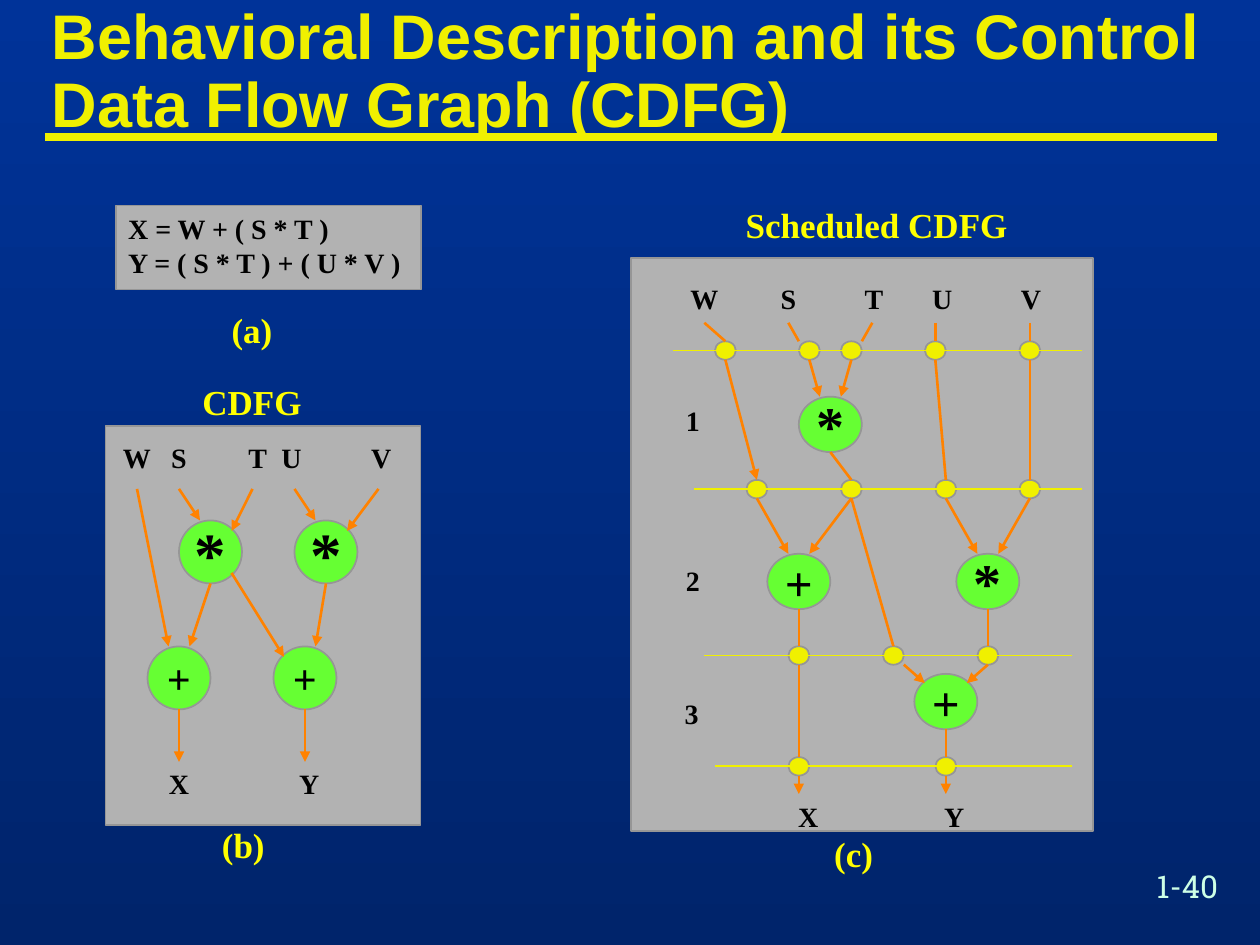
"""Build a slide showing a behavioral description and its control data flow graphs."""
from dataclasses import dataclass
from typing import NamedTuple

from lxml import etree
from pptx import Presentation
from pptx.dml.color import RGBColor
from pptx.enum.shapes import MSO_CONNECTOR, MSO_SHAPE
from pptx.enum.text import MSO_ANCHOR, MSO_AUTO_SIZE, PP_ALIGN
from pptx.oxml.ns import qn
from pptx.util import Pt

RECTANGLE, OVAL = MSO_SHAPE.RECTANGLE, MSO_SHAPE.OVAL
STRAIGHT = MSO_CONNECTOR.STRAIGHT
LEFT, CENTER = PP_ALIGN.LEFT, PP_ALIGN.CENTER
TOP, MIDDLE = MSO_ANCHOR.TOP, MSO_ANCHOR.MIDDLE
NO_AUTOFIT = MSO_AUTO_SIZE.NONE


@dataclass(frozen=True)
class Theme:
    sky: str = "003399"
    navy: str = "00246B"
    gold: str = "F0F000"
    yellow: str = "FFFF00"
    black: str = "000000"
    gray: str = "B2B2B2"
    border: str = "969696"
    green: str = "66FF33"
    orange: str = "FF8200"
    mint: str = "CDFFE6"
    serif: str = "Times New Roman"
    sans: str = "Arial"
    slab: str = "Roboto Slab"
    title: int = 36
    caption: int = 20
    number: int = 18
    label: int = 16


class Operator(NamedTuple):
    sign: str
    x: float
    y: float
    size: int


class Label(NamedTuple):
    text: str
    x: float
    y: float


class Edge(NamedTuple):
    start: tuple
    end: tuple
    arrow: bool = True


class Step(NamedTuple):
    y: int
    left: int
    right: int
    registers: tuple


@dataclass(frozen=True)
class Graph:
    """A panel whose contents are placed in grid units from its top left corner."""
    left: float
    top: float
    columns: int
    rows: int
    step_x: float
    step_y: float
    operators: list
    edges: list
    labels: list
    steps: tuple = ()

    def place(self, x: float, y: float) -> tuple:
        return self.left + x * self.step_x, self.top + y * self.step_y


THEME = Theme()

CDFG = Graph(
    60.3, 243.4, 30, 38, 6, 6,
    operators=[Operator("*", 10, 12, 36), Operator("*", 21, 12, 36),
               Operator("+", 7, 24, 24), Operator("+", 19, 24, 24)],
    edges=[Edge((10, 15), (8, 21)), Edge((12, 14), (17, 22)), Edge((21, 15), (20, 21)),
           Edge((7, 6), (9, 9)), Edge((18, 6), (20, 9)), Edge((14, 6), (12, 10)),
           Edge((26, 6), (23, 10)), Edge((3, 6), (6, 21)),
           Edge((7, 27), (7, 32)), Edge((19, 27), (19, 32))],
    labels=[Label("W", 3, 3), Label("S", 7, 3), Label("T", 14.5, 3), Label("U", 17.7, 3),
            Label("V", 26.25, 3), Label("X", 7, 34), Label("Y", 19.4, 34)],
)

SCHEDULED = Graph(
    360.5, 147.5, 44, 62, 6, 5.28,
    operators=[Operator("*", 19, 18, 32), Operator("*", 34, 35, 32),
               Operator("+", 16, 35, 28), Operator("+", 30, 48, 28)],
    edges=[Edge((7, 7), (9, 9), False), Edge((15, 7), (16, 9), False),
           Edge((23, 7), (22, 9), False), Edge((29, 7), (29, 9), False),
           Edge((38, 7), (38, 9), False), Edge((17, 11), (18, 15)), Edge((21, 11), (20, 15)),
           Edge((9, 11), (12, 24)), Edge((19, 21), (21, 24), False),
           Edge((29, 11), (30, 24), False), Edge((38, 11), (38, 24), False),
           Edge((12, 26), (15, 32)), Edge((21, 26), (17, 32)),
           Edge((30, 26), (33, 32)), Edge((38, 26), (35, 32)),
           Edge((16, 38), (16, 42), False), Edge((21, 26), (25, 42), False),
           Edge((34, 38), (34, 42), False), Edge((26, 44), (28, 46)), Edge((34, 44), (32, 46)),
           Edge((16, 44), (16, 54), False), Edge((30, 51), (30, 54), False),
           Edge((16, 56), (16, 58)), Edge((30, 56), (30, 58))],
    labels=[Label("W", 7, 4.3), Label("S", 15, 4.3), Label("T", 23.15, 4.3),
            Label("U", 29.65, 4.3), Label("V", 38.1, 4.3), Label("X", 16.9, 60.4),
            Label("Y", 30.8, 60.4), Label("1", 5.9, 17.5), Label("2", 5.9, 34.9),
            Label("3", 5.8, 49.3)],
    steps=(Step(10, 4, 43, (9, 17, 21, 29, 38)), Step(25, 6, 43, (12, 21, 30, 38)),
           Step(43, 7, 42, (16, 25, 34)), Step(55, 8, 42, (16, 30))),
)


def write_text(shape, *lines: str, size: float = THEME.label, color: str = THEME.black,
               font: str = THEME.serif, bold: bool = True, align=CENTER, anchor=MIDDLE,
               wrap: bool = False, gap: float = 0, spacing: float = 1) -> None:
    frame = shape.text_frame
    frame.word_wrap, frame.auto_size, frame.vertical_anchor = wrap, NO_AUTOFIT, anchor
    for index, line in enumerate(lines):
        para = frame.add_paragraph() if index else frame.paragraphs[0]
        para.alignment, para.line_spacing = align, spacing
        para.space_before = Pt(gap if index else 0)
        span = para.add_run()
        span.text = line
        span.font.size, span.font.name, span.font.bold = Pt(size), font, bold
        span.font.color.rgb = RGBColor.from_string(color)


def add_text(slide, x: float, y: float, *lines: str, width: float = 30,
             height: float = 26, **style) -> None:
    box = slide.shapes.add_textbox(Pt(x - width / 2), Pt(y - height / 2), Pt(width), Pt(height))
    write_text(box, *lines, **style)


def add_block(slide, kind, left: float, top: float, width: float, height: float, fill: str):
    block = slide.shapes.add_shape(kind, Pt(left), Pt(top), Pt(width), Pt(height))
    block.shadow.inherit = False
    block.fill.solid()
    block.fill.fore_color.rgb = RGBColor.from_string(fill)
    block.line.color.rgb = RGBColor.from_string(THEME.border)
    block.line.width = Pt(1)
    return block


def add_line(slide, start: tuple, end: tuple, color: str, width: float, arrow: bool = False):
    line = slide.shapes.add_connector(STRAIGHT, *(Pt(value) for value in (*start, *end)))
    line.line.color.rgb = RGBColor.from_string(color)
    line.line.width = Pt(width)
    properties = line.element.spPr
    if arrow:
        etree.SubElement(properties.find(qn("a:ln")), qn("a:tailEnd"), type="triangle")
    etree.SubElement(properties, qn("a:effectLst"))
    return line


def add_oval(slide, graph: Graph, x: float, y: float, units: int, fill: str):
    width, height = units * graph.step_x, units * graph.step_y
    center_x, center_y = graph.place(x, y)
    return add_block(slide, OVAL, center_x - width / 2, center_y - height / 2,
                     width, height, fill)


def draw_graph(slide, graph: Graph) -> None:
    add_block(slide, RECTANGLE, graph.left, graph.top, graph.columns * graph.step_x,
              graph.rows * graph.step_y, THEME.gray)
    for step in graph.steps:
        for x in step.registers:
            add_oval(slide, graph, x, step.y, 2, THEME.gold)
        add_line(slide, graph.place(step.left, step.y), graph.place(step.right, step.y),
                 THEME.gold, 1)
    for operator in graph.operators:
        oval = add_oval(slide, graph, operator.x, operator.y, 6, THEME.green)
        write_text(oval, operator.sign, size=operator.size)
    for edge in graph.edges:
        add_line(slide, graph.place(*edge.start), graph.place(*edge.end),
                 THEME.orange, 1.5, edge.arrow)
    for label in graph.labels:
        add_text(slide, *graph.place(label.x, label.y), label.text)


def draw_title(slide, text: str) -> None:
    title = slide.shapes.title
    title.left, title.top, title.width, title.height = Pt(22.3), Pt(16.5), Pt(676), Pt(50.4)
    write_text(title, text, size=THEME.title, color=THEME.gold, font=THEME.sans,
               align=LEFT, wrap=True, spacing=0.9)
    effects = etree.Element(qn("a:effectLst"))
    shadow = etree.SubElement(effects, qn("a:outerShdw"), dist="35921", dir="2700000")
    etree.SubElement(shadow, qn("a:srgbClr"), val=THEME.black)
    title.element.find(".//" + qn("a:rPr")).find(qn("a:solidFill")).addnext(effects)
    rule = add_line(slide, (26, 78.3), (695.7, 78.3), THEME.gold, 4.5)
    title.element.addprevious(rule.element)


def main() -> None:
    deck = Presentation()
    deck.slide_width, deck.slide_height = Pt(720), Pt(540)
    slide = deck.slides.add_slide(deck.slide_layouts[5])
    background = slide.background.fill
    background.gradient()
    background.gradient_angle = 270
    for stop, color in zip(background.gradient_stops, (THEME.sky, THEME.navy)):
        stop.color.rgb = RGBColor.from_string(color)

    draw_title(slide, "Behavioral Description and its Control Data Flow Graph (CDFG)")
    code = add_block(slide, RECTANGLE, 66.2, 117.5, 174.5, 48, THEME.gray)
    write_text(code, "X = W + ( S * T )", "Y = ( S * T ) + ( U * V )", align=LEFT, anchor=TOP)
    draw_graph(slide, CDFG)
    draw_graph(slide, SCHEDULED)

    caption = {"size": THEME.caption, "color": THEME.yellow}
    add_text(slide, 144, 209, "(a)", "CDFG", width=72, height=72, gap=17, **caption)
    add_text(slide, 139, 482.5, "(b)", width=40, **caption)
    add_text(slide, 487.8, 487.5, "(c)", width=40, **caption)
    add_text(slide, 501, 128.5, "Scheduled CDFG", width=164, **caption)
    add_text(slide, 686.9, 506.2, "1-40", width=66.2, height=28.8, size=THEME.number,
             color=THEME.mint, font=THEME.slab, bold=False, align=LEFT, anchor=TOP)
    deck.save("out.pptx")


if __name__ == "__main__":
    main()
